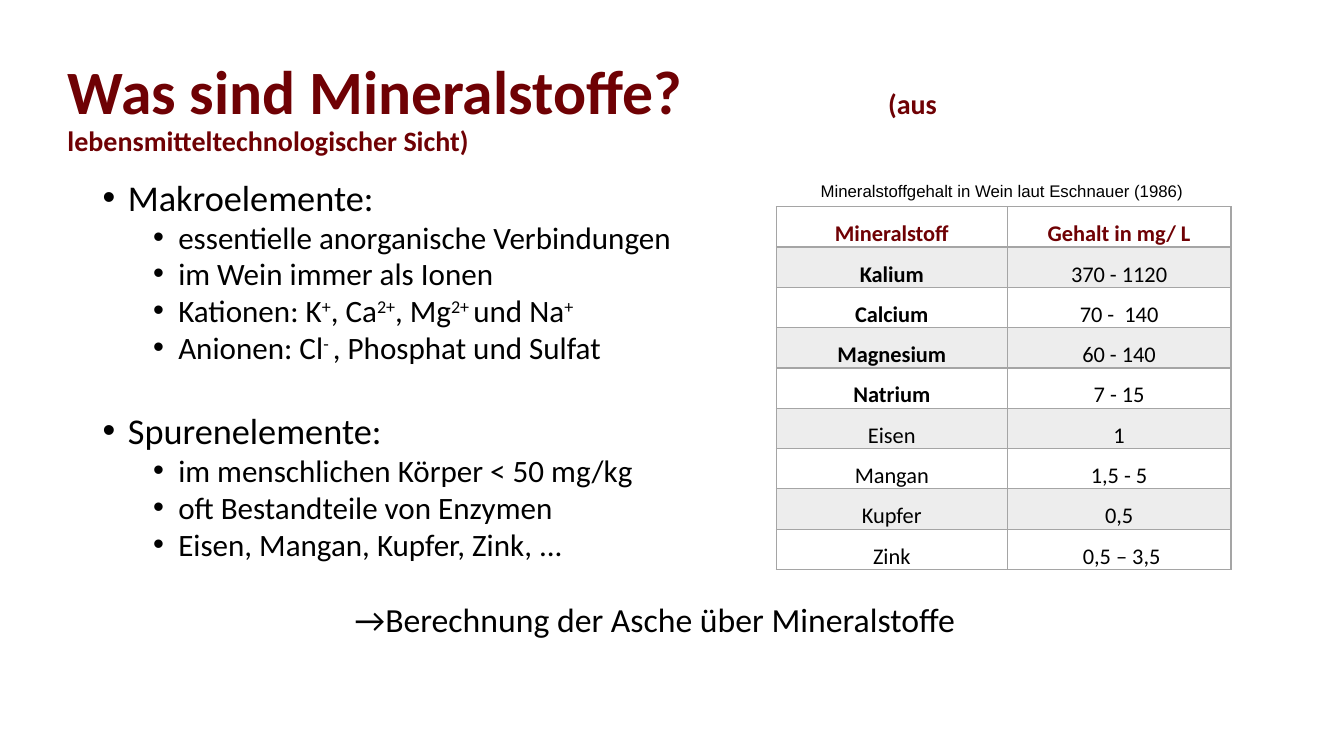
"""Builds a slide on the minerals found in wine."""
from lxml.etree import SubElement
from pptx import Presentation
from pptx.dml.color import RGBColor
from pptx.enum.text import MSO_ANCHOR, PP_ALIGN
from pptx.oxml.ns import qn
from pptx.util import Inches, Pt

MIDDLE, TOP = MSO_ANCHOR.MIDDLE, MSO_ANCHOR.TOP
CENTER = PP_ALIGN.CENTER
RED, BLACK, GRAY, BAND = "6F0104", "000000", "A5A5A5", "EDEDED"

POINTS = [
    (0, 0, "Makroelemente:"),
    (1, 5, "essentielle anorganische Verbindungen"),
    (1, 5, "im Wein immer als Ionen"),
    (1, 5, "Kationen: K^+^, Ca^2+^, Mg^2+ ^und Na^+^"),
    (1, 5, "Anionen: Cl^- ^, Phosphat und Sulfat"),
    (0, 36.7, "Spurenelemente:"),
    (1, 5, "im menschlichen Körper < 50 mg/kg"),
    (1, 5, "oft Bestandteile von Enzymen"),
    (1, 5, "Eisen, Mangan, Kupfer, Zink, ..."),
]
LEVELS = [(0.25, 25.9), (0.75, 22.2)]
ROWS = [
    ("Mineralstoff", "Gehalt in mg/ L"),
    ("Kalium", "370 - 1120"),
    ("Calcium", "70 -  140"),
    ("Magnesium", "60 - 140"),
    ("Natrium", "7 - 15"),
    ("Eisen", "1"),
    ("Mangan", "1,5 - 5"),
    ("Kupfer", "0,5"),
    ("Zink", " 0,5 – 3,5"),
]


def color(code):
    return RGBColor.from_string(code)


def write(para, words, size=16, font="Calibri", ink=BLACK, bold=False):
    for i, part in enumerate(words.split("^")):
        if not part:
            continue
        run = para.add_run()
        run.text = part
        run.font.size, run.font.name, run.font.bold = Pt(size), font, bold
        run.font.color.rgb = color(ink)
        if i % 2:
            run._r.get_or_add_rPr().set("baseline", "30000")


class Deck:
    def __init__(self):
        self.show = Presentation()
        self.show.slide_width = Inches(13.33)
        self.show.slide_height = Inches(7.5)
        self.slide = self.show.slides.add_slide(self.show.slide_layouts[6])

    def box(self, left, top, width, height, anchor=TOP, wrap=True):
        shape = self.slide.shapes.add_textbox(
            Inches(left), Inches(top), Inches(width), Inches(height))
        frame = shape.text_frame
        frame.word_wrap, frame.vertical_anchor = wrap, anchor
        return frame

    def title(self, frame, main, side, stop):
        para = frame.paragraphs[0]
        para.line_spacing = 0.9
        tabs = SubElement(para._p.get_or_add_pPr(), qn("a:tabLst"))
        SubElement(tabs, qn("a:tab"), pos=str(Inches(stop)), algn="l")
        write(para, main + "\t", size=44, ink=RED, bold=True)
        write(para, side, size=20, ink=RED, bold=True)

    def point(self, para, words, size, indent, gap, mark=True):
        para.line_spacing, para.space_before = 0.8, Pt(gap)
        props = para._p.get_or_add_pPr()
        props.set("marL", str(Inches(indent)))
        props.set("indent", str(Inches(-0.25 if mark else 0)))
        if mark:
            SubElement(props, qn("a:buFont"), typeface="Arial")
            SubElement(props, qn("a:buChar"), char="•")
        write(para, words, size=size)

    def edges(self, cell, base):
        props = cell._tc.get_or_add_tcPr()
        for side in "LRTB":
            wide = base if side == "B" else 1
            line = SubElement(props, qn("a:ln" + side), w=str(Pt(wide)))
            fill = SubElement(line, qn("a:solidFill"))
            SubElement(fill, qn("a:srgbClr"), val=GRAY)

    def table(self, rows, left, top, widths, height):
        grid = self.slide.shapes.add_table(
            len(rows), len(widths), Inches(left), Inches(top),
            Inches(sum(widths)), Inches(height * len(rows))).table
        grid.first_row = grid.horz_banding = False
        for col, width in zip(grid.columns, widths):
            col.width = Inches(width)
        for r, row in enumerate(rows):
            grid.rows[r].height = Inches(height)
            for c, words in enumerate(row):
                cell = grid.cell(r, c)
                cell.margin_left = cell.margin_right = Inches(0.07)
                cell.margin_top = cell.margin_bottom = 0
                self.edges(cell, 1 if r else 2)
                if r % 2:
                    cell.fill.solid()
                    cell.fill.fore_color.rgb = color(BAND)
                else:
                    cell.fill.background()
                para = cell.text_frame.paragraphs[0]
                para.alignment, para.line_spacing = CENTER, 1.5
                write(para, words, ink=BLACK if r else RED,
                      bold=r == 0 or (c == 0 and r < 5))


def main():
    deck = Deck()
    head = deck.box(0.57, 0.4, 11.85, 1.37, MIDDLE)
    deck.title(head, "Was sind Mineralstoffe?",
               "(aus lebensmitteltechnologischer Sicht)", 8.14)

    body = deck.box(0.92, 1.77, 11.5, 4.99)
    para = body.paragraphs[0]
    for level, gap, words in POINTS:
        indent, size = LEVELS[level]
        deck.point(para, words, size, indent, gap)
        para = body.add_paragraph()
    deck.point(para, "→Berechnung der Asche über Mineralstoffe",
               24.1, 2.5, 31.7, mark=False)

    deck.table(ROWS, 7.7, 2.05, (2.29, 2.22), 0.4)
    note = deck.box(8.04, 1.74, 3.82, 0.3, MIDDLE, wrap=False)
    write(note.paragraphs[0],
          "Mineralstoffgehalt in Wein laut Eschnauer (1986)",
          size=12, font="Arial")
    deck.show.save("out.pptx")


if __name__ == "__main__":
    main()
